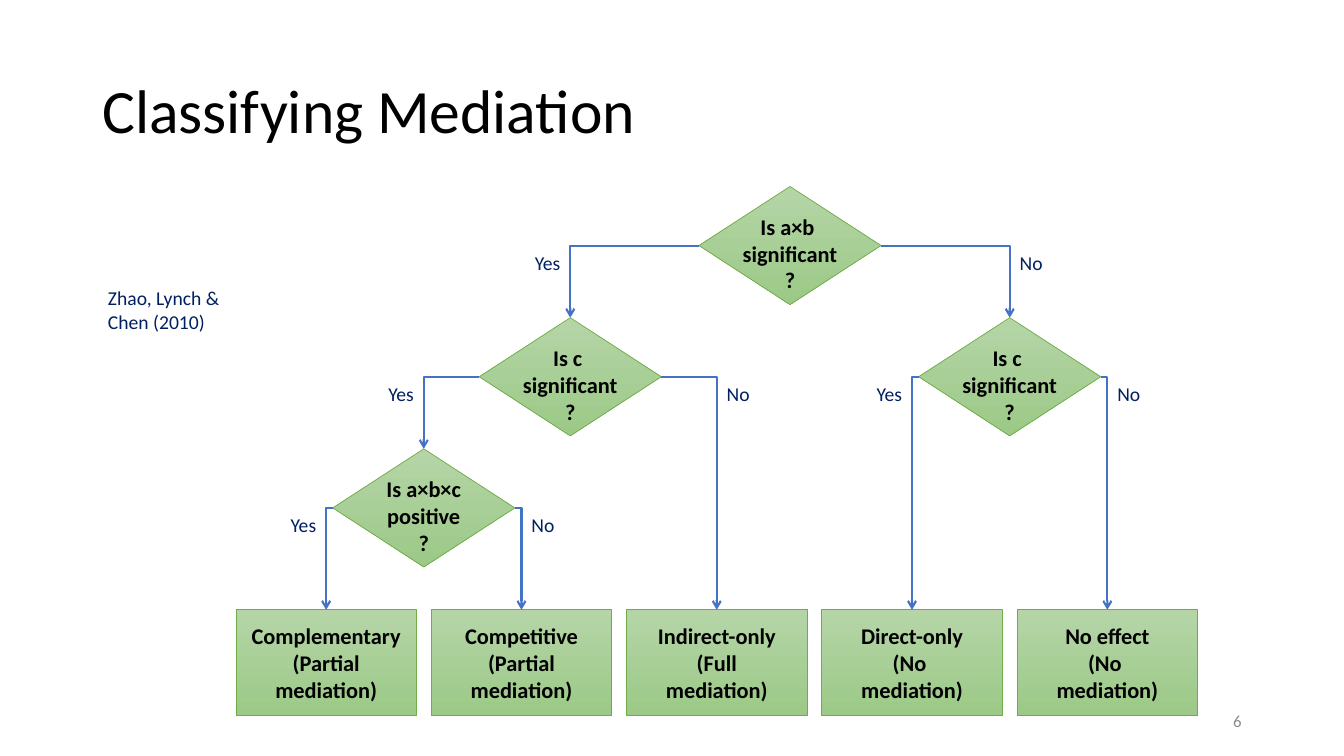
"""Build the decision tree slide on classifying mediation."""
from dataclasses import dataclass

from lxml import etree
from pptx import Presentation
from pptx.dml.color import RGBColor
from pptx.enum import shapes, text as tx
from pptx.oxml import ns
from pptx.util import Pt

LEFT, PITCH = 233, 139.5
TOP, STEP = 133.2, 93.7
DIA_W, DIA_H = 130, 84.4
BOX_W, BOX_H, BOX_Y = 129, 75.6, 435.6
TAG_W, TAG_H = 41, 21.6
NAVY, BLUE, GREEN = "002060", "4472C4", "70AD47"
FADE = ("B5D5A7", "9CC987")
ALIGN, ANCHOR = tx.PP_ALIGN, tx.MSO_ANCHOR


@dataclass
class Leaf:
    """An outcome box in a numbered column."""
    label: str
    col: float

    @property
    def x(self) -> float:
        """Return the centre."""
        return LEFT + PITCH * self.col


@dataclass
class Node:
    """A question with a yes branch and a no branch."""
    label: str
    row: int
    yes: "Node | Leaf"
    no: "Node | Leaf"

    @property
    def x(self) -> float:
        """Return the centre, midway between the branches."""
        return (self.yes.x + self.no.x) / 2


TREE = Node(
    "Is a×b \nsignificant\n?", 0,
    Node("Is c \nsignificant\n?", 1,
         Node(" Is a×b×c \npositive\n?", 2,
              Leaf("Complementary\n(Partial\nmediation)", 0),
              Leaf("Competitive\n(Partial\nmediation)", 1)),
         Leaf("Indirect-only\n(Full\nmediation)", 2)),
    Node("Is c \nsignificant\n?", 1,
         Leaf("Direct-only\n(No \nmediation)", 3),
         Leaf("No effect\n(No \nmediation)", 4)))


def tint(code: str) -> RGBColor:
    """Turn a hex string into a colour."""
    return RGBColor.from_string(code)


def write(shape, words: str, *, size: float = 14, color: str = NAVY,
          bold: bool = False, align=ALIGN.LEFT, anchor=ANCHOR.TOP,
          wrap: bool = True, inset: float = 3.6, space: float = 1) -> None:
    """Put formatted text into a shape."""
    frame = shape.text_frame
    frame.word_wrap = wrap
    frame.vertical_anchor = anchor
    frame.margin_top = Pt(inset)
    para = frame.paragraphs[0]
    para.text = words
    para.alignment = align
    para.line_spacing = space
    for run in para.runs:
        run.font.name = "Calibri"
        run.font.size = Pt(size)
        run.font.bold = bold
        run.font.color.rgb = tint(color)
    for gap in shape.element.iter(ns.qn("a:br")):
        etree.SubElement(gap, ns.qn("a:rPr"), sz=str(size * 100))


def note(slide, words: str, x: float, y: float, w: float, h: float,
         **look) -> None:
    """Add a text box."""
    write(slide.shapes.add_textbox(Pt(x), Pt(y), Pt(w), Pt(h)), words, **look)


def block(slide, kind, words: str, mid: float, y: float, w: float, h: float,
          inset: float = 3.6) -> None:
    """Add a green shape centred on mid."""
    shape = slide.shapes.add_shape(kind, Pt(mid - w / 2), Pt(y), Pt(w), Pt(h))
    shape.shadow.inherit = False
    shape.fill.gradient()
    shape.fill.gradient_angle = 270
    for stop, code in zip(shape.fill.gradient_stops, FADE):
        stop.color.rgb = tint(code)
    shape.line.color.rgb = tint(GREEN)
    shape.line.width = Pt(0.5)
    write(shape, words, size=16, color="000000", bold=True, wrap=False,
          align=ALIGN.CENTER, anchor=ANCHOR.MIDDLE, inset=inset)


def arrow(slide, x: float, y: float, to_x: float, to_y: float) -> None:
    """Add an arrow that runs sideways and then down."""
    line = slide.shapes.add_connector(
        shapes.MSO_CONNECTOR.ELBOW, Pt(x), Pt(y), Pt(to_x), Pt(to_y))
    line.line.color.rgb = tint(BLUE)
    line.line.width = Pt(1.5)
    props = line.element.spPr
    props.find(ns.qn("a:prstGeom")).set("prst", "bentConnector2")
    etree.SubElement(props.find(ns.qn("a:ln")), ns.qn("a:tailEnd"),
                     type="arrow")
    etree.SubElement(props, ns.qn("a:effectLst"))


def grow(slide, item: Node | Leaf) -> float:
    """Draw an item with all below it and return its top."""
    kinds = shapes.MSO_SHAPE
    if isinstance(item, Leaf):
        block(slide, kinds.RECTANGLE, item.label, item.x, BOX_Y, BOX_W, BOX_H)
        return BOX_Y
    top = TOP + STEP * item.row
    mid = top + DIA_H / 2
    block(slide, kinds.FLOWCHART_DECISION, item.label, item.x, top,
          DIA_W, DIA_H, inset=14.4)
    for kid, word, side, align in ((item.yes, "Yes", -1, ALIGN.RIGHT),
                                   (item.no, "No", 1, ALIGN.LEFT)):
        end = grow(slide, kid)
        arrow(slide, item.x + side * DIA_W / 2, mid, kid.x, end)
        edge = kid.x - TAG_W if side < 0 else kid.x
        note(slide, word, edge, mid, TAG_W, TAG_H, align=align)
    return top


def main() -> None:
    """Build and save the slide."""
    deck = Presentation()
    deck.slide_width, deck.slide_height = Pt(960), Pt(540)
    slide = deck.slides.add_slide(deck.slide_layouts[6])
    note(slide, "Classifying Mediation", 66, 28.8, 828, 104.4, size=44,
         color="000000", anchor=ANCHOR.MIDDLE, space=0.9)
    note(slide, "6", 678, 500.4, 216, 28.8, size=12, color="8C8C8C",
         align=ALIGN.RIGHT, anchor=ANCHOR.MIDDLE)
    note(slide, "Zhao, Lynch & \nChen (2010)", 70, 201, 106, 41)
    grow(slide, TREE)
    deck.save("out.pptx")


if __name__ == "__main__":
    main()
